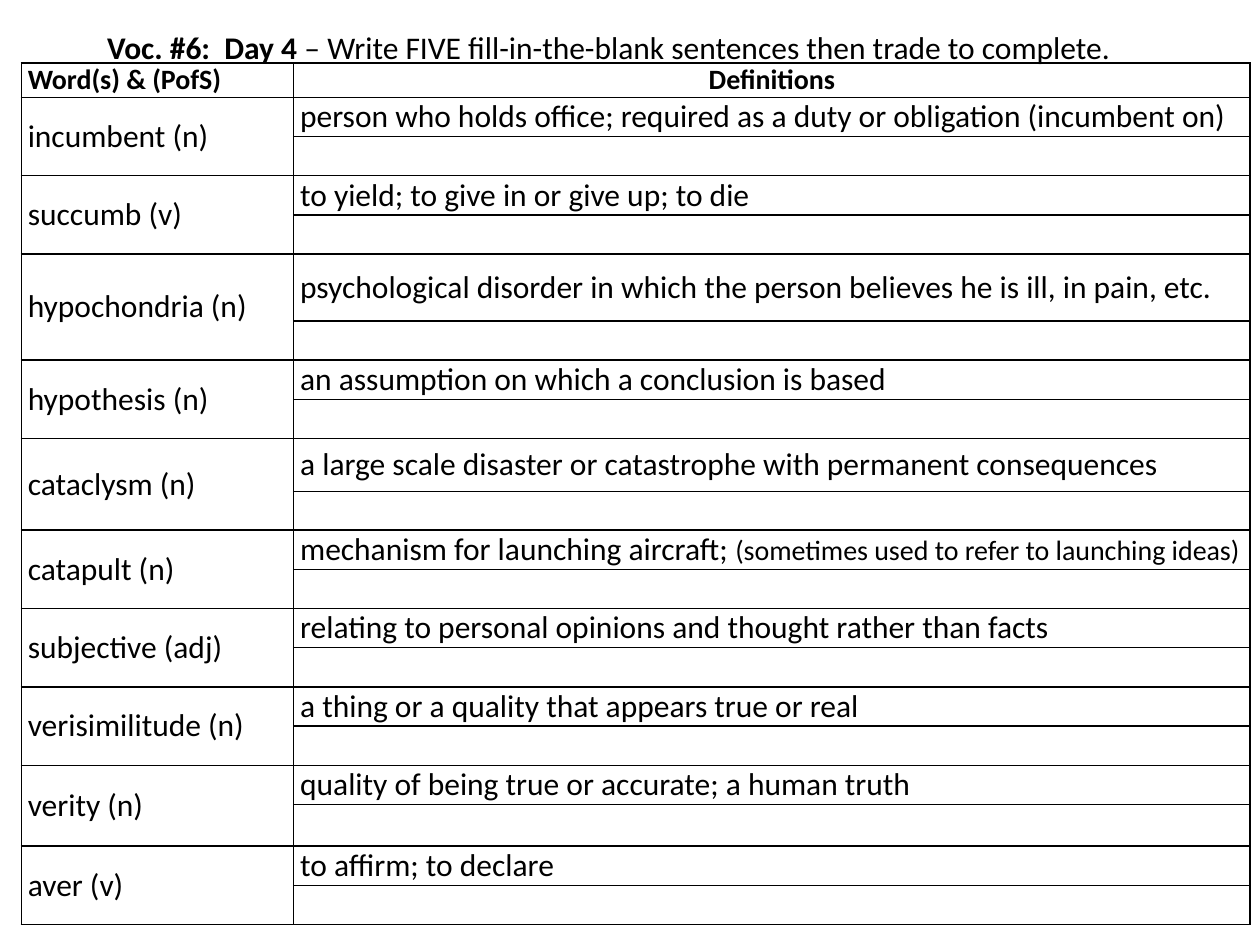
from dataclasses import dataclass
from typing import NamedTuple

from lxml.etree import SubElement
from pptx import Presentation
from pptx.dml.color import RGBColor
from pptx.enum.text import MSO_ANCHOR, MSO_AUTO_SIZE, PP_ALIGN
from pptx.oxml.ns import qn
from pptx.util import Cm, Pt


@dataclass(frozen=True)
class Theme:
    font: str = "Calibri"
    ink: RGBColor = RGBColor(0, 0, 0)
    body: Pt = Pt(18)
    small: Pt = Pt(16)
    border: Pt = Pt(1)


class Piece(NamedTuple):
    text: str
    size: Pt
    bold: bool = False


class Entry(NamedTuple):
    word: str
    definition: str
    aside: str = ""
    definition_height: float = 0.79
    answer_height: float = 0.79


THEME = Theme()
HEADER_HEIGHT = 0.64
COLUMN_WIDTHS = (5.49, 19.28)

ENTRIES = [
    Entry("incumbent (n)", "person who holds office; required as a duty or obligation (incumbent on)"),
    Entry("succumb (v)", "to yield; to give in or give up; to die"),
    Entry("hypochondria (n)", "psychological disorder in which the person believes he is ill, in pain, etc.",
          definition_height=1.35),
    Entry("hypothesis (n)", "an assumption on which a conclusion is based"),
    Entry("cataclysm (n)", "a large scale disaster or catastrophe with permanent consequences",
          definition_height=1.07, answer_height=0.56),
    Entry("catapult (n)", "mechanism for launching aircraft; ", "(sometimes used to refer to launching ideas)"),
    Entry("subjective (adj)", "relating to personal opinions and thought rather than facts"),
    Entry("verisimilitude (n)", "a thing or a quality that appears true or real"),
    Entry("verity (n)", "quality of being true or accurate; a human truth", answer_height=0.84),
    Entry("aver (v)", "to affirm; to declare"),
]


def write(paragraph, *pieces: Piece) -> None:
    for piece in pieces:
        run = paragraph.add_run()
        run.text = piece.text
        run.font.name = THEME.font
        run.font.size = piece.size
        run.font.bold = piece.bold
        run.font.color.rgb = THEME.ink


def size_empty_line(paragraph, size: Pt) -> None:
    """Give a paragraph without runs the line height of the given type size."""
    end = SubElement(paragraph._p, qn("a:endParaRPr"), sz=str(int(size.pt * 100)))
    SubElement(end, qn("a:latin"), typeface=THEME.font)


def style_cell(cell) -> None:
    cell.margin_left = cell.margin_right = Cm(0.13)
    cell.margin_top = cell.margin_bottom = 0
    cell.vertical_anchor = MSO_ANCHOR.MIDDLE
    properties = cell._tc.get_or_add_tcPr()
    for side in ("lnL", "lnR", "lnT", "lnB"):
        line = SubElement(properties, qn(f"a:{side}"), w=str(int(THEME.border)))
        fill = SubElement(line, qn("a:solidFill"))
        SubElement(fill, qn("a:srgbClr"), val=str(THEME.ink))
    cell.fill.background()


def add_title(slide) -> None:
    title = slide.shapes.add_textbox(Cm(0.64), Cm(0.43), Cm(22.43), Cm(1.02))
    frame = title.text_frame
    frame.word_wrap = True
    frame.auto_size = MSO_AUTO_SIZE.SHAPE_TO_FIT_TEXT
    frame.vertical_anchor = MSO_ANCHOR.MIDDLE
    paragraph = frame.paragraphs[0]
    paragraph._p.get_or_add_pPr().set("indent", str(int(Cm(1.27))))
    write(paragraph,
          Piece("Voc. #6:  Day 4 ", THEME.body, True),
          Piece("– Write FIVE fill-in-the-blank sentences then trade to complete.", THEME.body))


def add_vocabulary(slide, entries: list[Entry]) -> None:
    heights = [HEADER_HEIGHT]
    for entry in entries:
        heights += [entry.definition_height, entry.answer_height]
    frame = slide.shapes.add_table(len(heights), len(COLUMN_WIDTHS), Cm(0.43), Cm(1.27),
                                   Cm(sum(COLUMN_WIDTHS)), Cm(sum(heights)))
    table = frame.table
    table.first_row = table.horz_banding = False
    for column, width in zip(table.columns, COLUMN_WIDTHS):
        column.width = Cm(width)
    for row, height in zip(table.rows, heights):
        row.height = Cm(height)
    for cell in table.iter_cells():
        style_cell(cell)

    for column, heading in enumerate(("Word(s) & (PofS)", "Definitions")):
        write(table.cell(0, column).text_frame.paragraphs[0], Piece(heading, THEME.small, True))
    table.cell(0, 1).text_frame.paragraphs[0].alignment = PP_ALIGN.CENTER

    for index, entry in enumerate(entries):
        top = 1 + 2 * index
        word, definition = table.cell(top, 0), table.cell(top, 1)
        word.merge(table.cell(top + 1, 0))
        write(word.text_frame.paragraphs[0], Piece(entry.word, THEME.body))
        pieces = [Piece(entry.definition, THEME.body)]
        if entry.aside:
            pieces.append(Piece(entry.aside, THEME.small))
        write(definition.text_frame.paragraphs[0], *pieces)
        for column in range(len(COLUMN_WIDTHS)):
            size_empty_line(table.cell(top + 1, column).text_frame.paragraphs[0], THEME.body)


def main() -> None:
    deck = Presentation()
    deck.slide_width, deck.slide_height = Cm(25.4), Cm(19.05)
    slide = deck.slides.add_slide(deck.slide_layouts[6])
    add_vocabulary(slide, ENTRIES)
    add_title(slide)
    deck.save("out.pptx")


if __name__ == "__main__":
    main()
